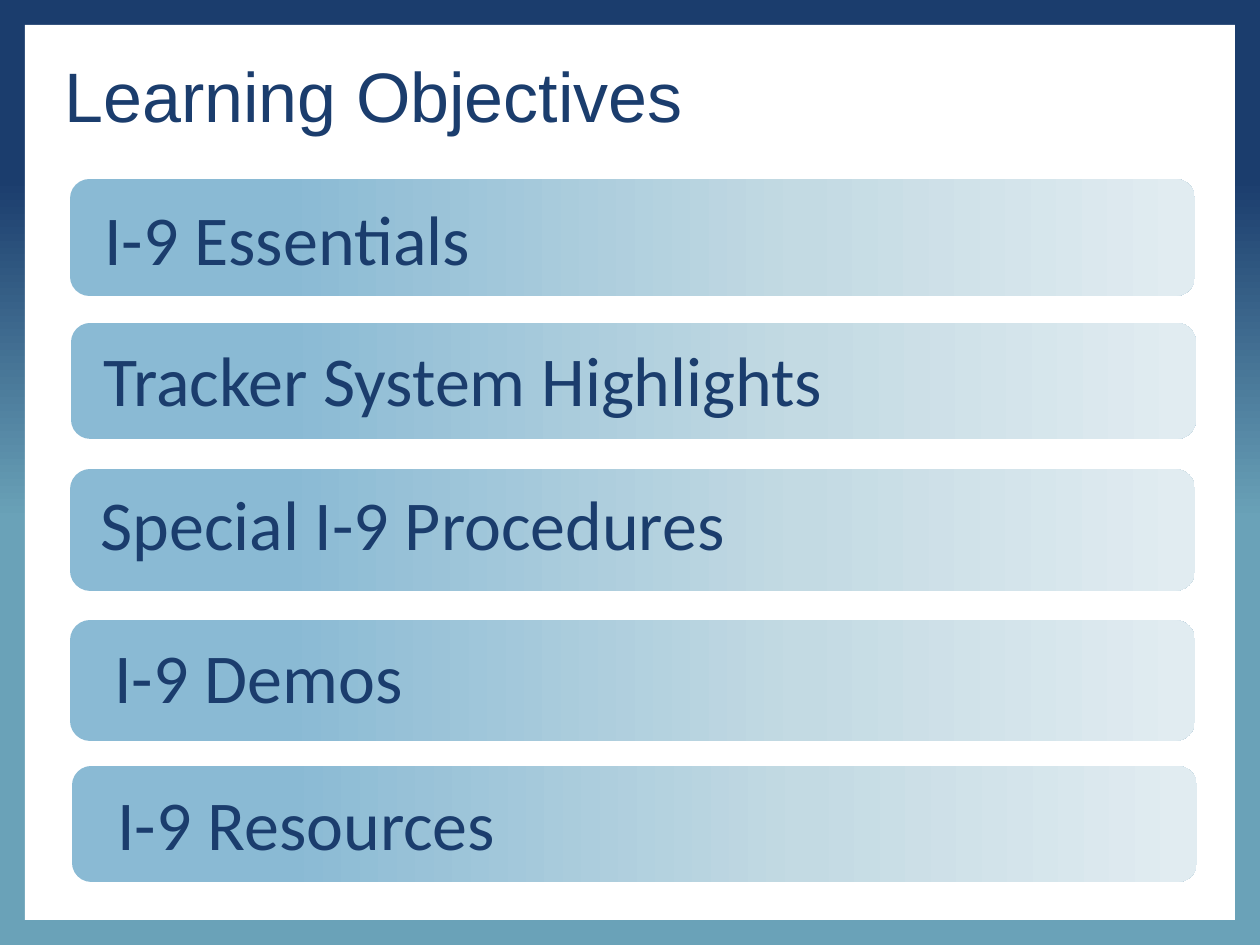
from copy import deepcopy
from typing import NamedTuple

from pptx import Presentation
from pptx.dml.color import RGBColor
from pptx.enum.shapes import MSO_SHAPE
from pptx.enum.text import MSO_ANCHOR
from pptx.util import Emu, Pt

PX_PER_INCH = 126
COLORS = {
    "navy": "1B3D6D",
    "teal": "6AA2B8",
    "white": "FFFFFF",
    "bar_start": "8ABAD4",
    "bar_middle": "C3DAE3",
    "bar_end": "E1ECF1",
}
BACKGROUND_STOPS = [(0.19, "navy"), (0.55, "teal")]
BAR_STOPS = [(0.19, "bar_start"), (0.65, "bar_middle"), (0.99, "bar_end")]
BAR_WIDTH = 1125
LABEL_WIDTH, LABEL_HEIGHT = 976, 97


class Objective(NamedTuple):
    text: str
    left: int
    top: int
    height: int
    label_left: int
    label_top: int


OBJECTIVES = [
    Objective("I-9 Essentials", 70, 179, 117, 92, 189),
    Objective("Tracker System Highlights", 71, 323, 116, 91, 330),
    Objective("Special I-9 Procedures", 70, 469, 122, 88, 474),
    Objective("I-9 Demos", 70, 620, 121, 102, 627),
    Objective("I-9 Resources", 72, 766, 116, 105, 774),
]


def px(value: int) -> Emu:
    return Emu(round(value * 914400 / PX_PER_INCH))


def rgb(name: str) -> RGBColor:
    return RGBColor.from_string(COLORS[name])


def set_gradient(owner, fill, stops: list, angle: int) -> None:
    fill.gradient()
    fill.gradient_angle = angle
    stop_list = owner.xpath(".//a:gsLst")[0]
    while len(stop_list) < len(stops):
        stop_list.append(deepcopy(stop_list[-1]))
    for stop, (position, color) in zip(fill.gradient_stops, stops):
        stop.position = position
        stop.color.rgb = rgb(color)


def add_box(s, kind, left: int, top: int, width: int, height: int):
    sp = s.shapes.add_shape(kind, px(left), px(top), px(width), px(height))
    sp.shadow.inherit = False
    sp.line.fill.background()
    return sp


def add_text(s, text: str, left: int, top: int, width: int, height: int, font: str):
    tf = s.shapes.add_textbox(px(left), px(top), px(width), px(height)).text_frame
    tf.word_wrap = True
    p = tf.paragraphs[0]
    p.text = text
    p.font.name = font
    p.font.size = Pt(40)
    p.font.color.rgb = rgb("navy")
    return tf


def add_objective(s, item: Objective) -> None:
    bar = add_box(s, MSO_SHAPE.ROUNDED_RECTANGLE,
                  item.left, item.top, BAR_WIDTH, item.height)
    set_gradient(bar.element, bar.fill, BAR_STOPS, 0)
    add_text(s, item.text, item.label_left, item.label_top,
             LABEL_WIDTH, LABEL_HEIGHT, "Calibri")


def main() -> None:
    prs = Presentation()
    prs.slide_width, prs.slide_height = px(1260), px(945)
    s = prs.slides.add_slide(prs.slide_layouts[6])
    set_gradient(s.element, s.background.fill, BACKGROUND_STOPS, 270)

    panel = add_box(s, MSO_SHAPE.RECTANGLE, 25, 25, 1210, 895)
    panel.fill.solid()
    panel.fill.fore_color.rgb = rgb("white")

    title = add_text(s, "Learning Objectives", 52, 53, 1166, 94, "Arial")
    title.vertical_anchor = MSO_ANCHOR.MIDDLE
    title.paragraphs[0].line_spacing = 0.9

    for item in OBJECTIVES:
        add_objective(s, item)
    prs.save("out.pptx")


if __name__ == "__main__":
    main()
